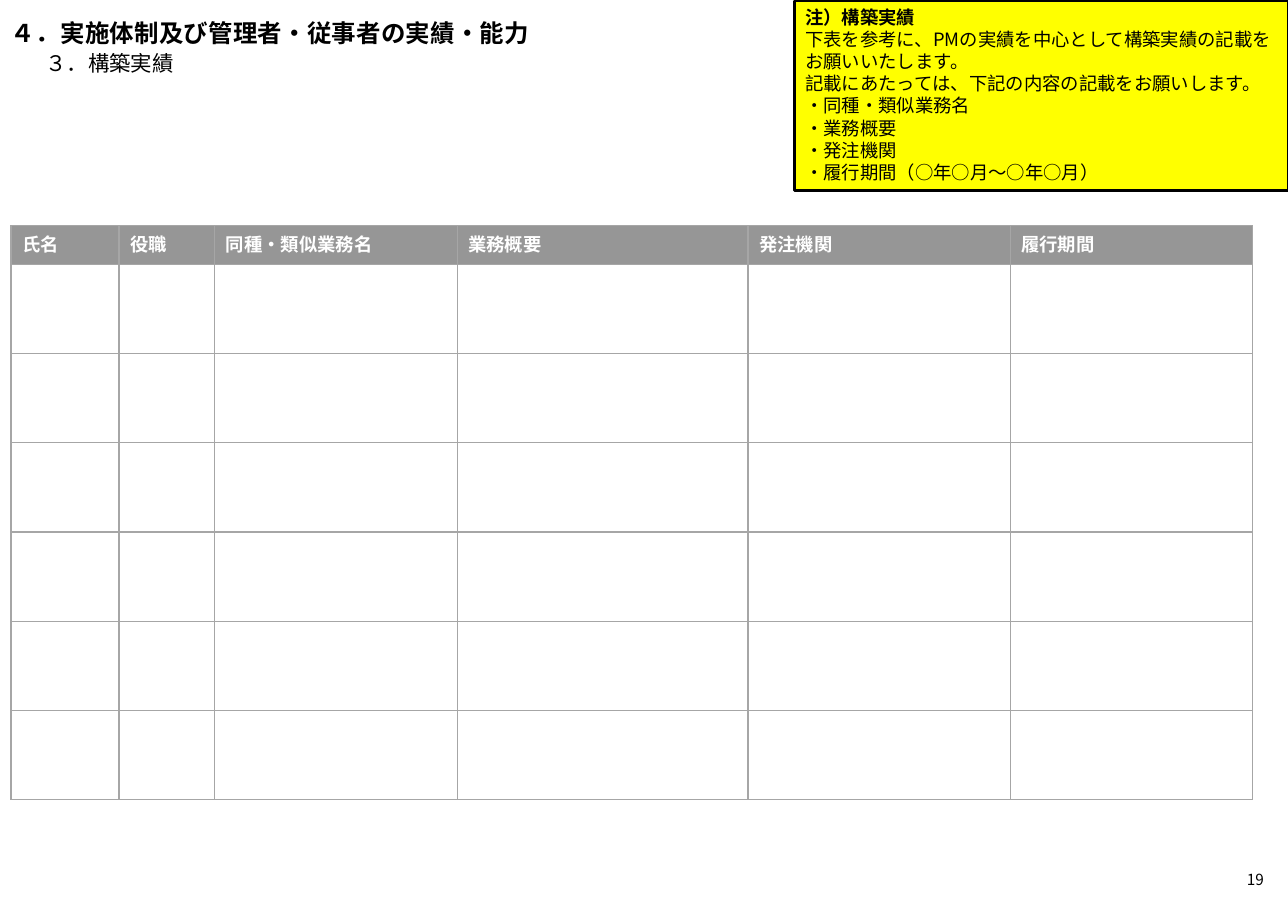
from lxml import etree
from pptx import Presentation
from pptx.dml.color import RGBColor
from pptx.enum.shapes import MSO_SHAPE as Shape
from pptx.enum.text import MSO_ANCHOR as Anchor, PP_ALIGN as Align
from pptx.oxml.ns import qn
from pptx.util import Inches, Pt

SANS, HEADER_FONT = "Noto Sans CJK JP", "Roboto"
BLACK, WHITE, YELLOW = "000000", "FFFFFF", "FFFF00"
HEADER_GRAY, BORDER_GRAY = "969696", "A6A6A6"

TITLE = "４．実施体制及び管理者・従事者の実績・能力"
SUBTITLE = "３．構築実績"
PAGE_NUMBER = "19"
NOTE = [
    "注）構築実績",
    "下表を参考に、PMの実績を中心として構築実績の記載をお願いいたします。",
    "記載にあたっては、下記の内容の記載をお願いします。",
    "・同種・類似業務名",
    "・業務概要",
    "・発注機関",
    "・履行期間（○年○月～○年○月）",
]
COLUMNS = [
    ("氏名", 0.98),
    ("役職", 0.87),
    ("同種・類似業務名", 2.2),
    ("業務概要", 2.64),
    ("発注機関", 2.38),
    ("履行期間", 2.2),
]
BLANK_ROWS, HEADER_HEIGHT, ROW_HEIGHT = 6, 0.35, 0.81


def color(hex_code):
    return RGBColor.from_string(hex_code)


def style(para, size, hex_code=BLACK, bold=False, font=SANS):
    """Format every run, naming the font for Latin and East Asian text."""
    for span in para.runs:
        span.font.size = Pt(size)
        span.font.bold = bold
        span.font.color.rgb = color(hex_code)
        span.font.name = font
        etree.SubElement(span.font._element, qn("a:ea"), typeface=font)


def add_line(page, text, place, size, bold=False, anchor=Anchor.MIDDLE, align=Align.LEFT):
    """Add a one-paragraph text box without margins and return its paragraph."""
    box = page.shapes.add_textbox(*map(Inches, place))
    frame = box.text_frame
    frame.word_wrap = True
    frame.margin_left = frame.margin_right = frame.margin_top = frame.margin_bottom = 0
    frame.vertical_anchor = anchor
    para = frame.paragraphs[0]
    para.text = text
    para.alignment = align
    style(para, size, bold=bold)
    return para


def add_borders(cell):
    properties = cell._tc.get_or_add_tcPr()
    for position, side in enumerate(("a:lnL", "a:lnR", "a:lnT", "a:lnB")):
        line = etree.Element(qn(side), w=str(Pt(1)))
        fill = etree.SubElement(line, qn("a:solidFill"))
        etree.SubElement(fill, qn("a:srgbClr"), val=BORDER_GRAY)
        properties.insert(position, line)


def add_record_table(page):
    width = sum(column_width for _, column_width in COLUMNS)
    height = HEADER_HEIGHT + BLANK_ROWS * ROW_HEIGHT
    table = page.shapes.add_table(
        BLANK_ROWS + 1, len(COLUMNS), Inches(0.1), Inches(2.05), Inches(width), Inches(height)
    ).table
    for index, row in enumerate(table.rows):
        row.height = Inches(ROW_HEIGHT if index else HEADER_HEIGHT)
        for cell in row.cells:
            cell.fill.solid()
            cell.fill.fore_color.rgb = color(WHITE if index else HEADER_GRAY)
            add_borders(cell)
    for index, (heading, column_width) in enumerate(COLUMNS):
        table.columns[index].width = Inches(column_width)
        cell = table.cell(0, index)
        cell.vertical_anchor = Anchor.MIDDLE
        cell.text_frame.text = heading
        style(cell.text_frame.paragraphs[0], 12, WHITE, True, HEADER_FONT)


def add_note(page):
    box = page.shapes.add_shape(
        Shape.RECTANGLE, Inches(7.21), Inches(0.01), Inches(4.48), Inches(1.72)
    )
    box.shadow.inherit = False
    box.fill.solid()
    box.fill.fore_color.rgb = color(YELLOW)
    box.line.color.rgb = color(BLACK)
    box.line.width = Pt(1.5)
    frame = box.text_frame
    frame.word_wrap = True
    frame.vertical_anchor = Anchor.TOP
    frame.text = "\n".join(NOTE)
    for index, para in enumerate(frame.paragraphs):
        para.alignment = Align.LEFT
        style(para, 12, bold=index == 0)


def main():
    deck = Presentation()
    deck.slide_width, deck.slide_height = Inches(11.69), Inches(8.27)
    page = deck.slides.add_slide(deck.slide_layouts[6])
    add_line(page, PAGE_NUMBER, (11.04, 7.91, 0.43, 0.16), 10,
             anchor=Anchor.BOTTOM, align=Align.RIGHT)
    title = add_line(page, TITLE, (0.1, 0.2, 11.5, 0.24), 16, bold=True)
    title.line_spacing = 0.85
    title.runs[0].font._element.set("spc", "20")
    add_line(page, SUBTITLE, (0.41, 0.45, 11.18, 0.24), 14)
    add_record_table(page)
    add_note(page)
    deck.save("out.pptx")


if __name__ == "__main__":
    main()
